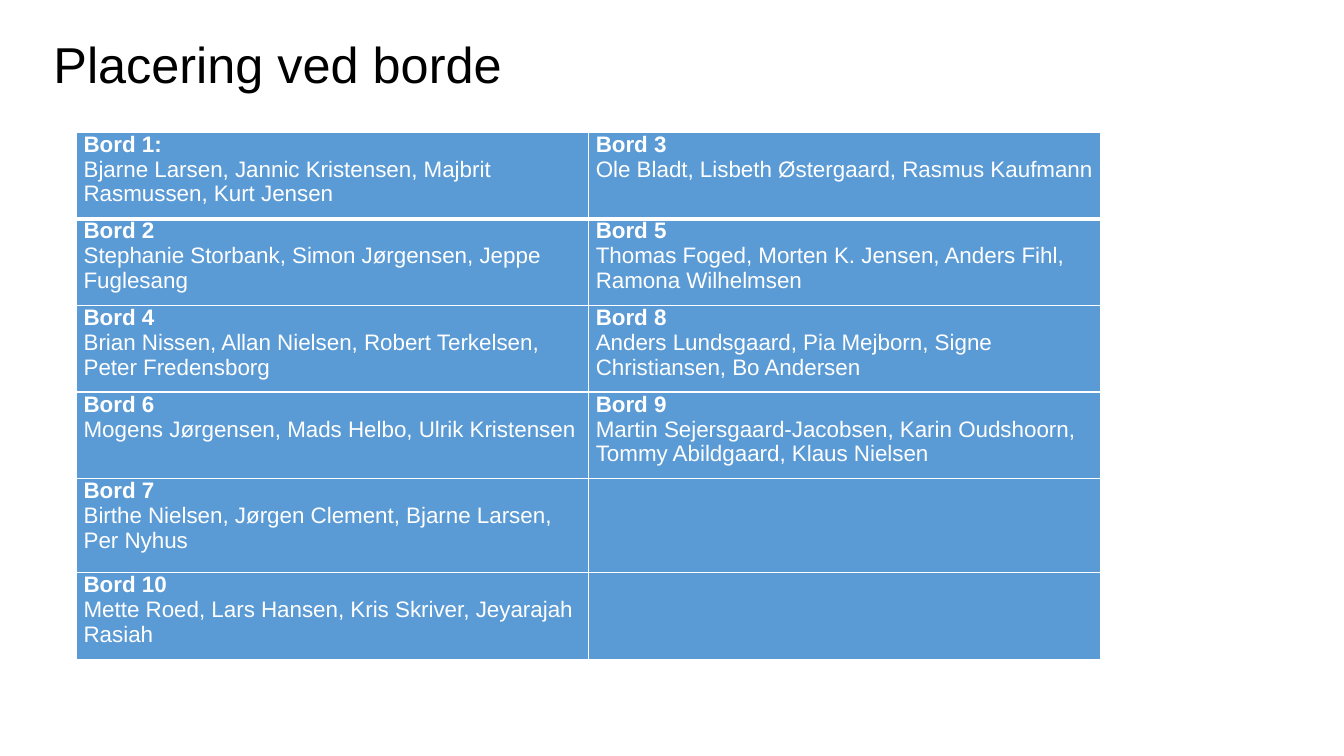
import pptx
import pptx.util
import pptx.dml.color
import pptx.enum.text
import pptx.oxml
import pptx.oxml.ns
from pptx.util import Inches

COLORS = {"title": "000000", "cell": "5B9BD5", "light": "FFFFFF"}

SEATING = [
    [("Bord 1:", "Bjarne Larsen, Jannic Kristensen, Majbrit Rasmussen, Kurt Jensen"),
     ("Bord 3", "Ole Bladt, Lisbeth Østergaard, Rasmus Kaufmann")],
    [("Bord 2", "Stephanie Storbank, Simon Jørgensen, Jeppe Fuglesang"),
     ("Bord 5", "Thomas Foged, Morten K. Jensen, Anders Fihl, Ramona Wilhelmsen")],
    [("Bord 4", "Brian Nissen, Allan Nielsen, Robert Terkelsen, Peter Fredensborg"),
     ("Bord 8", "Anders Lundsgaard, Pia Mejborn, Signe Christiansen, Bo Andersen")],
    [("Bord 6", "Mogens Jørgensen, Mads Helbo, Ulrik Kristensen"),
     ("Bord 9", "Martin Sejersgaard-Jacobsen, Karin Oudshoorn, Tommy Abildgaard, Klaus Nielsen")],
    [("Bord 7", "Birthe Nielsen, Jørgen Clement, Bjarne Larsen, Per Nyhus")],
    [("Bord 10", "Mette Roed, Lars Hansen, Kris Skriver, Jeyarajah Rasiah")],
]
ROW_HEIGHTS = [0.86, 0.86, 0.86, 0.86, 0.93, 0.86]


class SeatingSlide:
    font = "Arial"

    def __init__(self, deck):
        self.slide = deck.slides.add_slide(deck.slide_layouts[5])

    def color(self, name):
        return pptx.dml.color.RGBColor.from_string(COLORS[name])

    def run(self, paragraph, text, size, color, bold=False):
        run = paragraph.add_run()
        run.text = text
        run.font.name = self.font
        run.font.size = pptx.util.Pt(size)
        run.font.bold = bold
        run.font.color.rgb = self.color(color)

    def title(self, text):
        heading = self.slide.shapes.title
        heading.left, heading.top = Inches(0.43), Inches(0.35)
        heading.width, heading.height = Inches(11.5), Inches(0.64)
        frame = heading.text_frame
        frame.word_wrap = True
        frame.auto_size = pptx.enum.text.MSO_AUTO_SIZE.NONE
        frame.vertical_anchor = pptx.enum.text.MSO_ANCHOR.MIDDLE
        paragraph = frame.paragraphs[0]
        paragraph.alignment = pptx.enum.text.PP_ALIGN.LEFT
        paragraph.line_spacing = 0.9
        self.run(paragraph, text, 36, "title")

    def borders(self, cell, widths):
        properties = cell._tc.get_or_add_tcPr()
        for position, (side, width) in enumerate(widths.items()):
            properties.insert(position, pptx.oxml.parse_xml(
                f'<a:{side} {pptx.oxml.ns.nsdecls("a")} w="{pptx.util.Pt(width)}">'
                f'<a:solidFill><a:srgbClr val="{COLORS["light"]}"/></a:solidFill></a:{side}>'))

    def seating_table(self, seating, heights):
        table = self.slide.shapes.add_table(
            len(seating), 2, Inches(0.76), Inches(1.31),
            Inches(10.16), Inches(sum(heights))).table
        for row, height in zip(table.rows, heights):
            row.height = Inches(height)
        for index, groups in enumerate(seating):
            for column in range(2):
                cell = table.cell(index, column)
                cell.fill.solid()
                cell.fill.fore_color.rgb = self.color("cell")
                self.borders(cell, {"lnL": 1, "lnR": 1,
                                    "lnT": 3 if index == 1 else 1,
                                    "lnB": 3 if index == 0 else 1})
                cell.margin_left = cell.margin_right = Inches(0.07)
                cell.margin_top = cell.margin_bottom = 0
                if column < len(groups):
                    table_name, guests = groups[column]
                    self.run(cell.text_frame.paragraphs[0], table_name, 16, "light", True)
                    self.run(cell.text_frame.add_paragraph(), guests, 16, "light")


def main():
    deck = pptx.Presentation()
    deck.slide_width, deck.slide_height = Inches(13.33), Inches(7.5)
    page = SeatingSlide(deck)
    page.title("Placering ved borde")
    page.seating_table(SEATING, ROW_HEIGHTS)
    deck.save("out.pptx")


if __name__ == "__main__":
    main()
